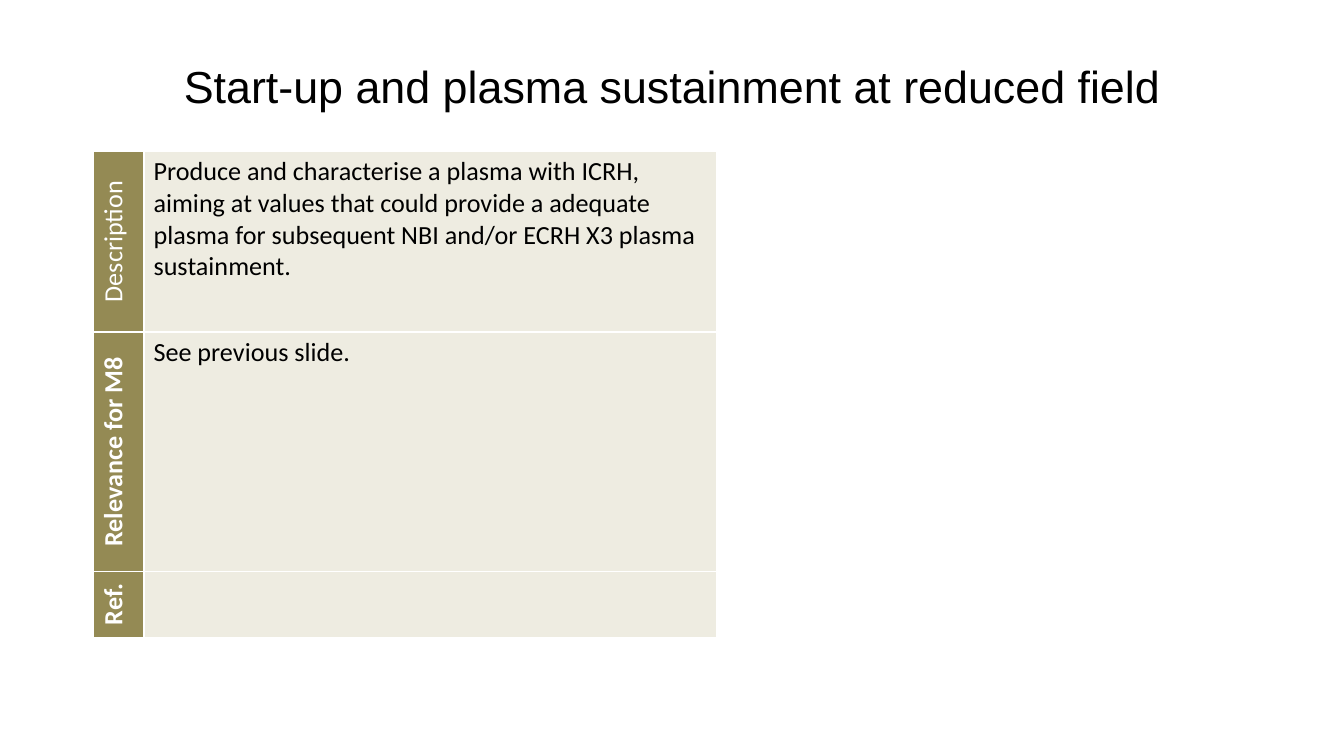
"""Build a slide with a title and a table of labelled descriptions."""
from lxml import etree
from pptx import Presentation
from pptx.dml.color import RGBColor
from pptx.enum import text
from pptx.oxml import ns
from pptx.util import Pt

COLORS = {"black": "000000", "white": "FFFFFF", "olive": "948A54", "cream": "EEECE1"}
COLS = [27.4, 306.7]
ROWS = [
    (97.2, "Description",
     "Produce and characterise a plasma with ICRH, aiming at values that could "
     "provide a adequate plasma for subsequent NBI and/or ECRH X3 plasma sustainment."),
    (128.2, "Relevance for M8", "See previous slide."),
    (35.3, "Ref.", ""),
]


def rgb(name):
    return RGBColor.from_string(COLORS[name])


def style_text(tf, font, size, color, align, bold=False):
    p = tf.paragraphs[0]
    p.alignment = align
    for r in p.runs:
        r.font.name = font
        r.font.size = Pt(size)
        r.font.bold = bold
        r.font.color.rgb = rgb(color)


def add_title(s, wording):
    sp = s.shapes.title
    sp.left, sp.top, sp.width, sp.height = Pt(49.7), Pt(21.6), Pt(620.6), Pt(48.2)
    tf = sp.text_frame
    tf.text = wording
    tf.word_wrap = True
    tf.auto_size = text.MSO_AUTO_SIZE.NONE
    tf.vertical_anchor = text.MSO_ANCHOR.MIDDLE
    style_text(tf, "Arial", 24, "black", text.PP_ALIGN.CENTER)


def set_borders(cell, color, width):
    tc_pr = cell._tc.get_or_add_tcPr()
    for side in ("lnL", "lnR", "lnT", "lnB"):
        ln = etree.SubElement(tc_pr, ns.qn(f"a:{side}"), w=str(Pt(width)))
        fill = etree.SubElement(ln, ns.qn("a:solidFill"))
        etree.SubElement(fill, ns.qn("a:srgbClr"), val=COLORS[color])


def fill_cell(cell, wording, fill, color, align, bold=False):
    set_borders(cell, "white", 1)
    cell.fill.solid()
    cell.fill.fore_color.rgb = rgb(fill)
    cell.margin_left = cell.margin_right = Pt(5.2)
    cell.margin_top = cell.margin_bottom = Pt(2.6)
    cell.text_frame.text = wording
    style_text(cell.text_frame, "Calibri", 14, color, align, bold)


def add_description_table(s):
    heights = [row[0] for row in ROWS]
    frame = s.shapes.add_table(len(ROWS), len(COLS), Pt(49.7), Pt(80.8),
                               Pt(sum(COLS)), Pt(sum(heights)))
    table = frame.table
    table.first_row = table.horz_banding = False
    for column, width in zip(table.columns, COLS):
        column.width = Pt(width)
    for i, (height, label, wording) in enumerate(ROWS):
        table.rows[i].height = Pt(height)
        head, body = table.cell(i, 0), table.cell(i, 1)
        fill_cell(head, label, "olive", "white", text.PP_ALIGN.CENTER, bold=i > 0)
        head._tc.get_or_add_tcPr().set("vert", "vert270")
        fill_cell(body, wording, "cream", "black", text.PP_ALIGN.LEFT)
    table.cell(0, 0).vertical_anchor = text.MSO_ANCHOR.MIDDLE


def main():
    prs = Presentation()
    prs.slide_width, prs.slide_height = Pt(720), Pt(405)
    s = prs.slides.add_slide(prs.slide_layouts[5])
    add_title(s, "Start-up and plasma sustainment at reduced field")
    add_description_table(s)
    prs.save("out.pptx")


if __name__ == "__main__":
    main()
